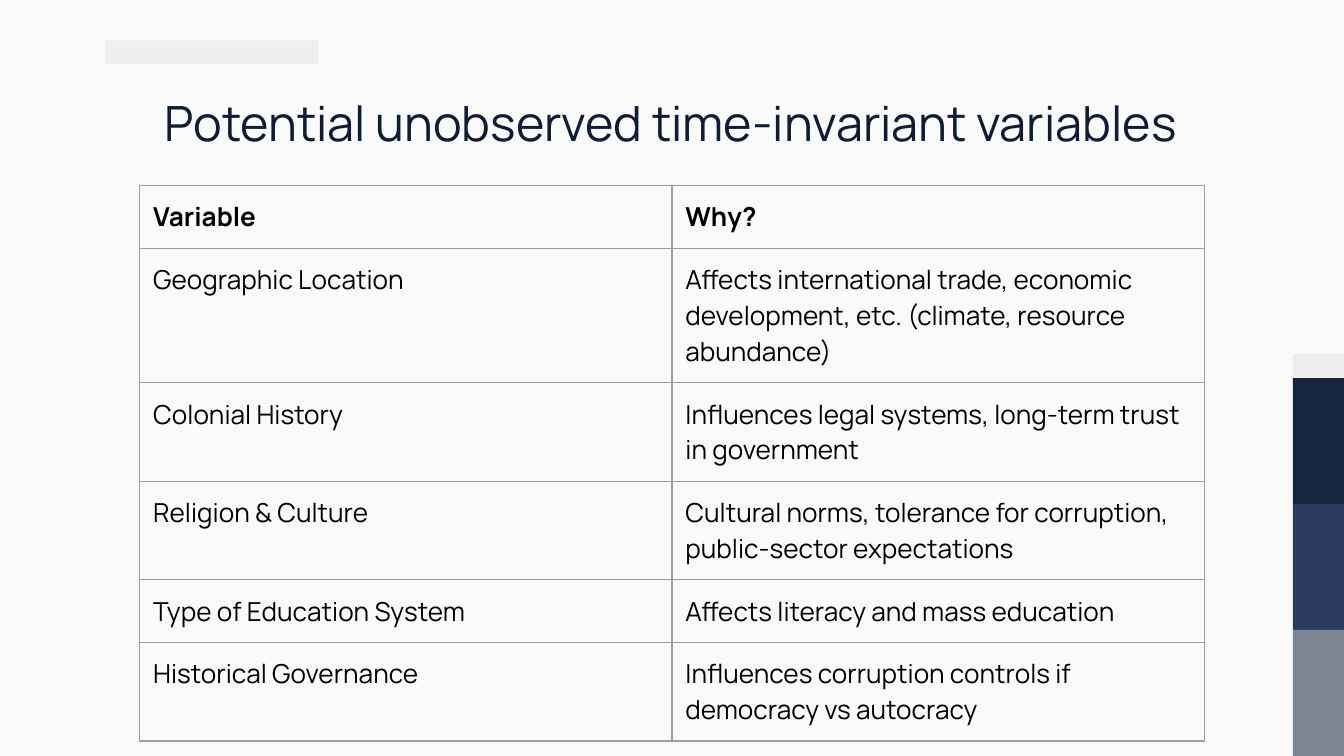
from dataclasses import dataclass

from lxml.etree import SubElement
from pptx import Presentation
from pptx.dml.color import RGBColor
from pptx.enum.shapes import MSO_SHAPE
from pptx.enum.text import MSO_ANCHOR, PP_ALIGN
from pptx.oxml.ns import qn
from pptx.util import Inches, Pt


@dataclass(frozen=True)
class Theme:
    font: str = "Manrope"
    background: str = "FAFAFA"
    title: str = "0E1D35"
    text: str = "000000"
    border: str = "9E9E9E"
    pale: str = "EFEFEF"
    navy: str = "15253F"
    blue: str = "2B3B5D"
    slate: str = "7C8594"
    title_size: int = 26
    table_size: int = 14
    border_width: float = 0.75
    inset: float = 0.1


THEME = Theme()
SLIDE_WIDTH = 10
SLIDE_HEIGHT = SLIDE_WIDTH * 9 / 16

TABLE_ROWS = [
    ("Variable", "Why?"),
    ("Geographic Location",
     "Affects international trade, economic development, etc. (climate, resource abundance)"),
    ("Colonial History", "Influences legal systems, long-term trust in government"),
    ("Religion & Culture",
     "Cultural norms, tolerance for corruption, public-sector expectations"),
    ("Type of Education System", "Affects literacy and mass education"),
    ("Historical Governance", "Influences corruption controls if democracy vs autocracy"),
]


def write_text(text_frame, text, *, size, color, bold=False, align=PP_ALIGN.LEFT):
    paragraph = text_frame.paragraphs[0]
    paragraph.alignment = align
    run = paragraph.add_run()
    run.text = text
    run.font.name = THEME.font
    run.font.size = Pt(size)
    run.font.bold = bold
    run.font.color.rgb = RGBColor.from_string(color)


def set_insets(target):
    """Give a cell or text frame the same margin on every side."""
    target.margin_left = target.margin_right = Inches(THEME.inset)
    target.margin_top = target.margin_bottom = Inches(THEME.inset)


def add_block(slide, left, top, width, height, color):
    shape = slide.shapes.add_shape(
        MSO_SHAPE.RECTANGLE, Inches(left), Inches(top), Inches(width), Inches(height))
    shape.shadow.inherit = False
    shape.fill.solid()
    shape.fill.fore_color.rgb = RGBColor.from_string(color)
    shape.line.fill.background()


def add_decoration(slide):
    """Stack three colour blocks in the lower half, with pale bars above and by the title."""
    left, width, bar_height = 9.62, 0.4, 0.18
    top, block_height = SLIDE_HEIGHT / 2, SLIDE_HEIGHT / 6
    for index, color in enumerate((THEME.navy, THEME.blue, THEME.slate)):
        add_block(slide, left, top + index * block_height, width, block_height, color)
    add_block(slide, left, top - bar_height, width, bar_height, THEME.pale)
    add_block(slide, 0.78, 0.3, 1.59, bar_height, THEME.pale)


def format_title(slide, text):
    title = slide.shapes.title
    title.left, title.top = Inches(0.78), Inches(0.59)
    title.width, title.height = Inches(8.43), Inches(0.63)
    text_frame = title.text_frame
    text_frame.word_wrap = True
    text_frame.vertical_anchor = MSO_ANCHOR.TOP
    set_insets(text_frame)
    write_text(text_frame, text, size=THEME.title_size, color=THEME.title,
               align=PP_ALIGN.CENTER)
    text_frame.paragraphs[0].line_spacing = 1.0
    text_frame.paragraphs[0].space_before = Pt(0)


def set_borders(cell):
    properties = cell._tc.get_or_add_tcPr()
    for position, side in enumerate(("lnL", "lnR", "lnT", "lnB")):
        line = SubElement(properties, qn(f"a:{side}"), w=str(Pt(THEME.border_width)))
        fill = SubElement(line, qn("a:solidFill"))
        SubElement(fill, qn("a:srgbClr"), val=THEME.border)
        properties.insert(position, line)


def add_table(slide, rows, *, left, top, column_width, row_height):
    column_count = len(rows[0])
    table = slide.shapes.add_table(
        len(rows), column_count, Inches(left), Inches(top),
        Inches(column_width * column_count), Inches(row_height * len(rows))).table
    table.first_row = table.horz_banding = False
    for column in table.columns:
        column.width = Inches(column_width)
    for row_index, texts in enumerate(rows):
        table.rows[row_index].height = Inches(row_height)
        for column_index, text in enumerate(texts):
            cell = table.cell(row_index, column_index)
            cell.fill.background()
            cell.vertical_anchor = MSO_ANCHOR.TOP
            set_insets(cell)
            set_borders(cell)
            write_text(cell.text_frame, text, size=THEME.table_size,
                       color=THEME.text, bold=row_index == 0)


def main():
    presentation = Presentation()
    presentation.slide_width = Inches(SLIDE_WIDTH)
    presentation.slide_height = Inches(SLIDE_HEIGHT)
    slide = presentation.slides.add_slide(presentation.slide_layouts.get_by_name("Title Only"))
    slide.background.fill.solid()
    slide.background.fill.fore_color.rgb = RGBColor.from_string(THEME.background)
    add_decoration(slide)
    format_title(slide, "Potential unobserved time-invariant variables")
    add_table(slide, TABLE_ROWS, left=1.04, top=1.38, column_width=3.96, row_height=0.42)
    presentation.save("out.pptx")


if __name__ == "__main__":
    main()
